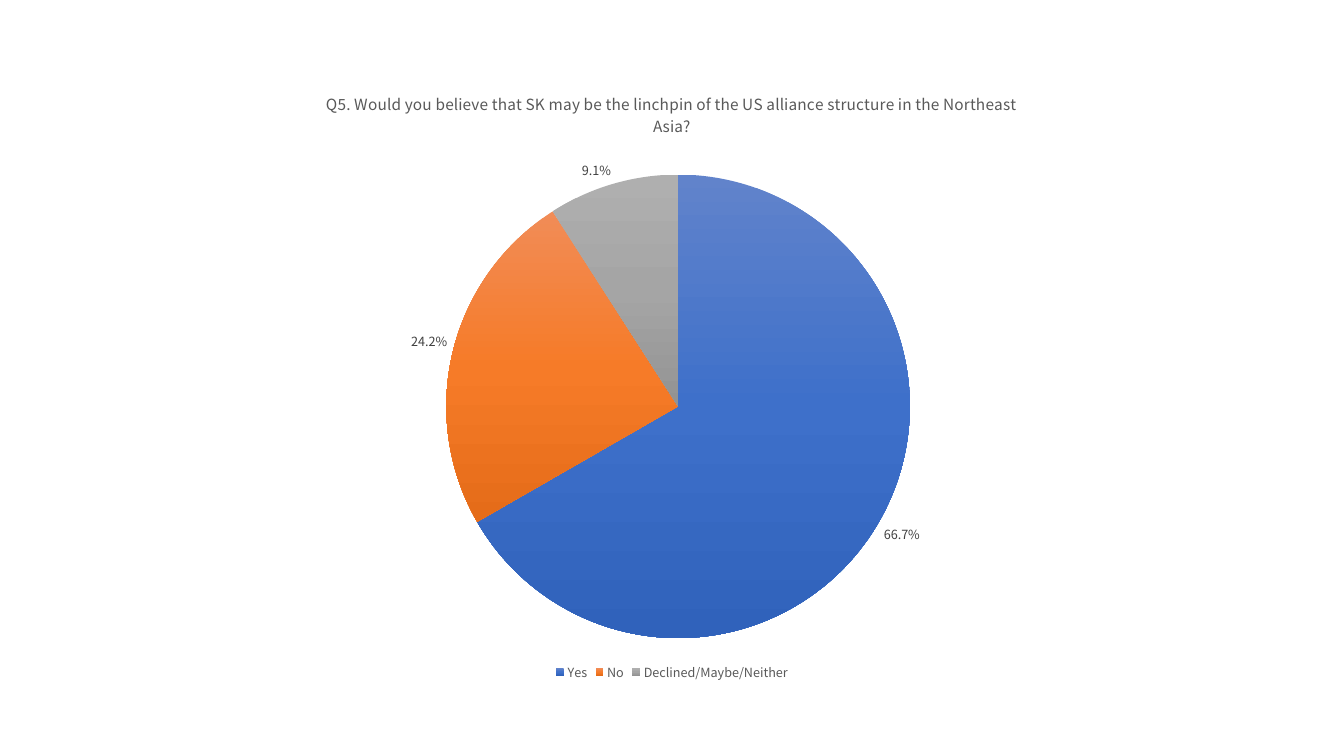
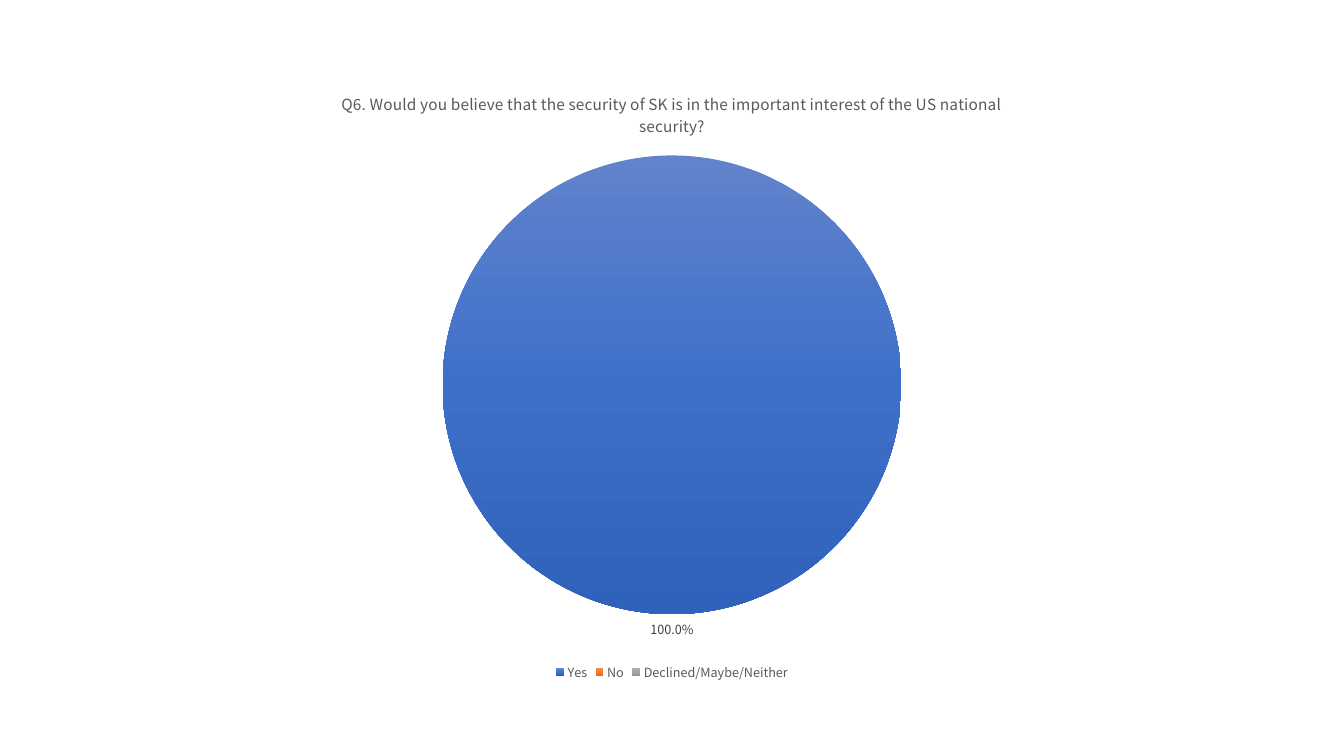
"""Build two survey slides, each with one pie chart of the answers."""
from copy import deepcopy

from pptx import Presentation
from pptx.chart.data import CategoryChartData
from pptx.dml.color import RGBColor
from pptx.enum import chart as ch
from pptx.util import Pt

FONT = "Noto Sans CJK KR"
TITLE_GRAY, LABEL_GRAY, BLACK = "595959", "404040", "000000"
GRADIENTS = {
    "Yes": ("6183CB", "3E70CA", "3062BB"),
    "No": ("F18C57", "F67B28", "E56C19"),
    "Declined/Maybe/Neither": ("AFAFAF", "A5A5A5", "939393"),
}
SURVEY = [
    ("Q5. Would you believe that SK may be the linchpin of the US alliance structure"
     " in the Northeast Asia?", (0.667, 0.242, 0.091)),
    ("Q6. Would you believe that the security of SK is in the important interest"
     " of the US national security?", (1, 0, 0)),
]


def rgb(color):
    """Turn a hex string into a colour."""
    return RGBColor.from_string(color)


def style_font(font, size, color):
    """Give a font the shared face with a size and colour."""
    font.name, font.size, font.bold = FONT, Pt(size), False
    font.color.rgb = rgb(color)


def fill_slice(chart, index, colors):
    """Shade one slice from top to bottom through three colours."""
    look = chart.plots[0].series[0].points[index].format
    look.line.fill.background()
    look.fill.gradient()
    look.fill.gradient_angle = 270
    stop_list = chart.element.xpath(f".//c:dPt[c:idx/@val='{index}']//a:gsLst")[0]
    stop_list.append(deepcopy(stop_list[-1]))
    for step, (stop, color) in enumerate(zip(look.fill.gradient_stops, colors)):
        stop.position = step / 2
        stop.color.rgb = rgb(color)


def add_labels(plot):
    """Show the non-zero shares outside the pie."""
    plot.vary_by_categories = True
    plot.has_data_labels = True
    labels = plot.data_labels
    labels.show_value = True
    labels.show_percentage = False
    labels.number_format, labels.number_format_is_linked = "0.0%;;", False
    labels.position = ch.XL_LABEL_POSITION.OUTSIDE_END
    style_font(labels.font, 9, LABEL_GRAY)


def add_answer_pie(slide, question, shares):
    """Place the pie chart for one survey question."""
    answers = CategoryChartData(number_format="0.0%")
    answers.categories = list(GRADIENTS)
    answers.add_series(question, shares)
    chart = slide.shapes.add_chart(
        ch.XL_CHART_TYPE.PIE, Pt(154), Pt(50.4), Pt(652), Pt(439), answers).chart
    style_font(chart.font, 10, BLACK)

    chart.has_title = True
    heading = chart.chart_title.text_frame
    heading.text = question
    style_font(heading.paragraphs[0].font, 11, TITLE_GRAY)

    chart.has_legend = True
    chart.legend.position = ch.XL_LEGEND_POSITION.BOTTOM
    chart.legend.include_in_layout = False
    style_font(chart.legend.font, 9, TITLE_GRAY)

    add_labels(chart.plots[0])
    for index, colors in enumerate(GRADIENTS.values()):
        fill_slice(chart, index, colors)


def main():
    """Build and save the presentation."""
    deck = Presentation()
    deck.slide_width, deck.slide_height = Pt(960), Pt(540)
    for question, shares in SURVEY:
        add_answer_pie(deck.slides.add_slide(deck.slide_layouts[6]), question, shares)
    deck.save("out.pptx")


if __name__ == "__main__":
    main()
